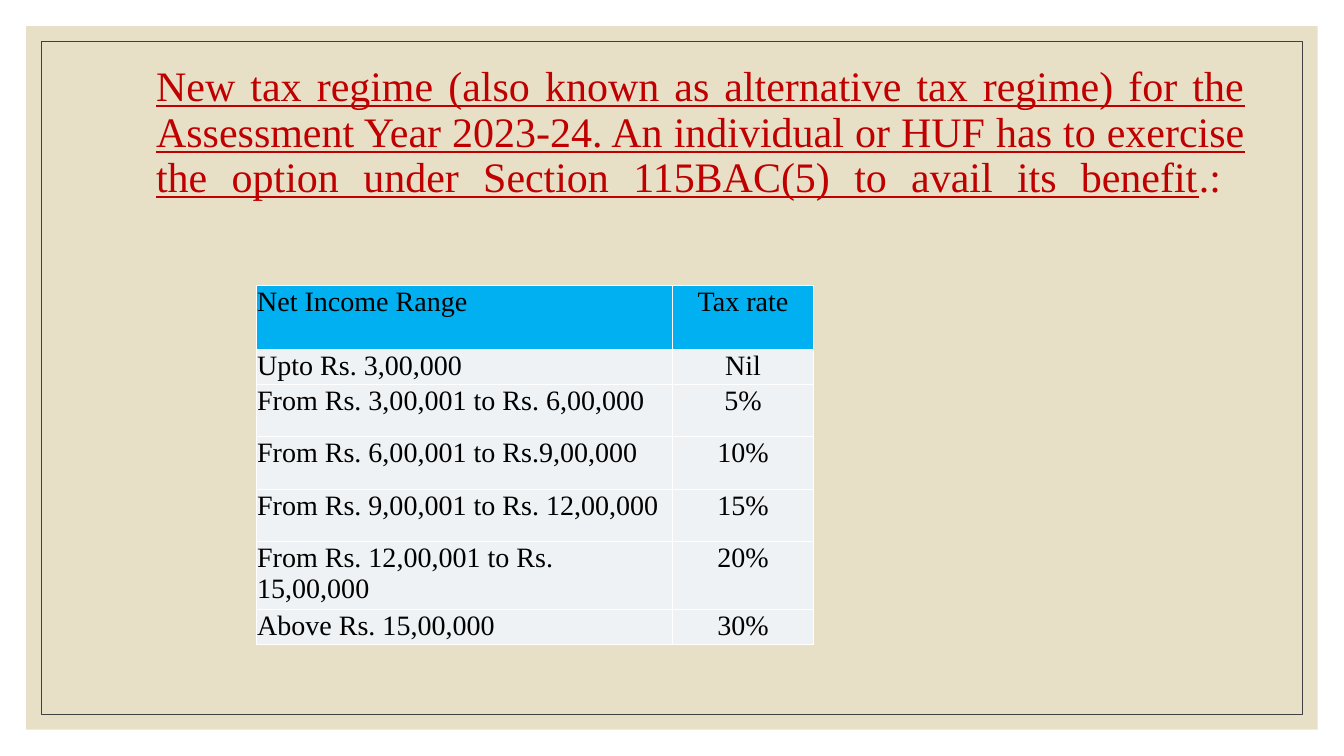
"""Build a slide showing the income tax slabs of the new tax regime."""
from dataclasses import dataclass

from lxml import etree
from pptx import Presentation
from pptx import util as u
from pptx.dml.color import RGBColor
from pptx.enum import shapes, text
from pptx.oxml import ns

FONT = "Times New Roman"
HEADING = (
    "New tax regime (also known as alternative tax regime) for the Assessment Year "
    "2023-24. An individual or HUF has to exercise the option under Section "
    "115BAC(5) to avail its benefit"
)


@dataclass(frozen=True)
class Panel:
    margin: float
    fill: str | None = None
    line: str | None = None


@dataclass(frozen=True)
class Slab:
    income: str
    rate: str
    height: float
    fill: str = "EEF2F5"


PANELS = [Panel(0.26, fill="E7E0C7"), Panel(0.41, line="404040")]
SLABS = [
    Slab("Net Income Range", "Tax rate", 0.64, "00B0F0"),
    Slab("Upto Rs. 3,00,000", "Nil", 0.26),
    Slab("From Rs. 3,00,001 to Rs. 6,00,000", "5%", 0.52),
    Slab("From Rs. 6,00,001 to Rs.9,00,000", "10%", 0.52),
    Slab("From Rs. 9,00,001 to Rs. 12,00,000", "15%", 0.52),
    Slab("From Rs. 12,00,001 to Rs. 15,00,000", "20%", 0.52),
    Slab("Above Rs. 15,00,000", "30%", 0.26),
]
COLUMN_WIDTHS = [4.13, 1.4]
COLUMN_ALIGNMENTS = [text.PP_ALIGN.LEFT, text.PP_ALIGN.CENTER]


def rgb(colour: str) -> RGBColor:
    """Turn a hex string into a colour."""
    return RGBColor.from_string(colour)


def style_run(run, size: float, colour: str, underline: bool = False) -> None:
    """Set the font of a run."""
    run.font.name = FONT
    run.font.size = u.Pt(size)
    run.font.color.rgb = rgb(colour)
    run.font.underline = underline


def draw_panel(slide, panel: Panel) -> None:
    """Draw a rectangle inset evenly from the slide edges."""
    area = slide.shapes.add_shape(
        shapes.MSO_SHAPE.RECTANGLE,
        u.Inches(panel.margin), u.Inches(panel.margin),
        u.Inches(13.33 - 2 * panel.margin), u.Inches(7.5 - 2 * panel.margin),
    )
    area.shadow.inherit = False
    if panel.fill:
        area.fill.solid()
        area.fill.fore_color.rgb = rgb(panel.fill)
    else:
        area.fill.background()
    if panel.line:
        area.line.color.rgb = rgb(panel.line)
        area.line.width = u.Pt(0.5)
    else:
        area.line.fill.background()


def draw_heading(slide) -> None:
    """Write the justified heading, its last line stretched by a line break."""
    heading = slide.shapes.add_textbox(
        u.Inches(1.45), u.Inches(0.6), u.Inches(11), u.Inches(6.2)
    )
    heading.text_frame.word_wrap = True
    paragraph = heading.text_frame.paragraphs[0]
    paragraph.text = HEADING
    paragraph.alignment = text.PP_ALIGN.JUSTIFY
    paragraph.line_spacing = 0.9
    style_run(paragraph.runs[0], 30, "C00000", underline=True)
    ending = paragraph.add_run()
    ending.text = ".: "
    style_run(ending, 30, "C00000")
    paragraph.add_line_break()


def add_borders(cell, colour: str, width: float) -> None:
    """Put a solid line on each side of a table cell."""
    properties = cell._tc.get_or_add_tcPr()
    for position, side in enumerate(("a:lnL", "a:lnR", "a:lnT", "a:lnB")):
        border = etree.Element(ns.qn(side), w=str(u.Pt(width)))
        fill = etree.SubElement(border, ns.qn("a:solidFill"))
        etree.SubElement(fill, ns.qn("a:srgbClr"), val=colour)
        properties.insert(position, border)


def fill_cell(cell, wording: str, fill: str, alignment: text.PP_ALIGN) -> None:
    """Write and style one table cell."""
    cell.margin_left = cell.margin_right = cell.margin_top = u.Inches(0.01)
    cell.margin_bottom = u.Inches(0)
    cell.fill.solid()
    cell.fill.fore_color.rgb = rgb(fill)
    add_borders(cell, "FFFFFF", 1)
    paragraph = cell.text_frame.paragraphs[0]
    paragraph.text = wording
    paragraph.alignment = alignment
    style_run(paragraph.runs[0], 20, "000000")


def draw_slabs(slide) -> None:
    """Draw the table of income ranges and tax rates."""
    rates = slide.shapes.add_table(
        len(SLABS), len(COLUMN_WIDTHS), u.Inches(2.54), u.Inches(2.83),
        u.Inches(sum(COLUMN_WIDTHS)), u.Inches(sum(slab.height for slab in SLABS)),
    ).table
    rates.first_row = rates.horz_banding = False
    for column, width in zip(rates.columns, COLUMN_WIDTHS):
        column.width = u.Inches(width)
    for row, slab in zip(rates.rows, SLABS):
        row.height = u.Inches(slab.height)
        wordings = (slab.income, slab.rate)
        for cell, wording, alignment in zip(row.cells, wordings, COLUMN_ALIGNMENTS):
            fill_cell(cell, wording, slab.fill, alignment)


def main() -> None:
    """Build and save the slide."""
    deck = Presentation()
    deck.slide_width, deck.slide_height = u.Inches(13.33), u.Inches(7.5)
    slide = deck.slides.add_slide(deck.slide_layouts[6])
    for panel in PANELS:
        draw_panel(slide, panel)
    draw_heading(slide)
    draw_slabs(slide)
    deck.save("out.pptx")


if __name__ == "__main__":
    main()
